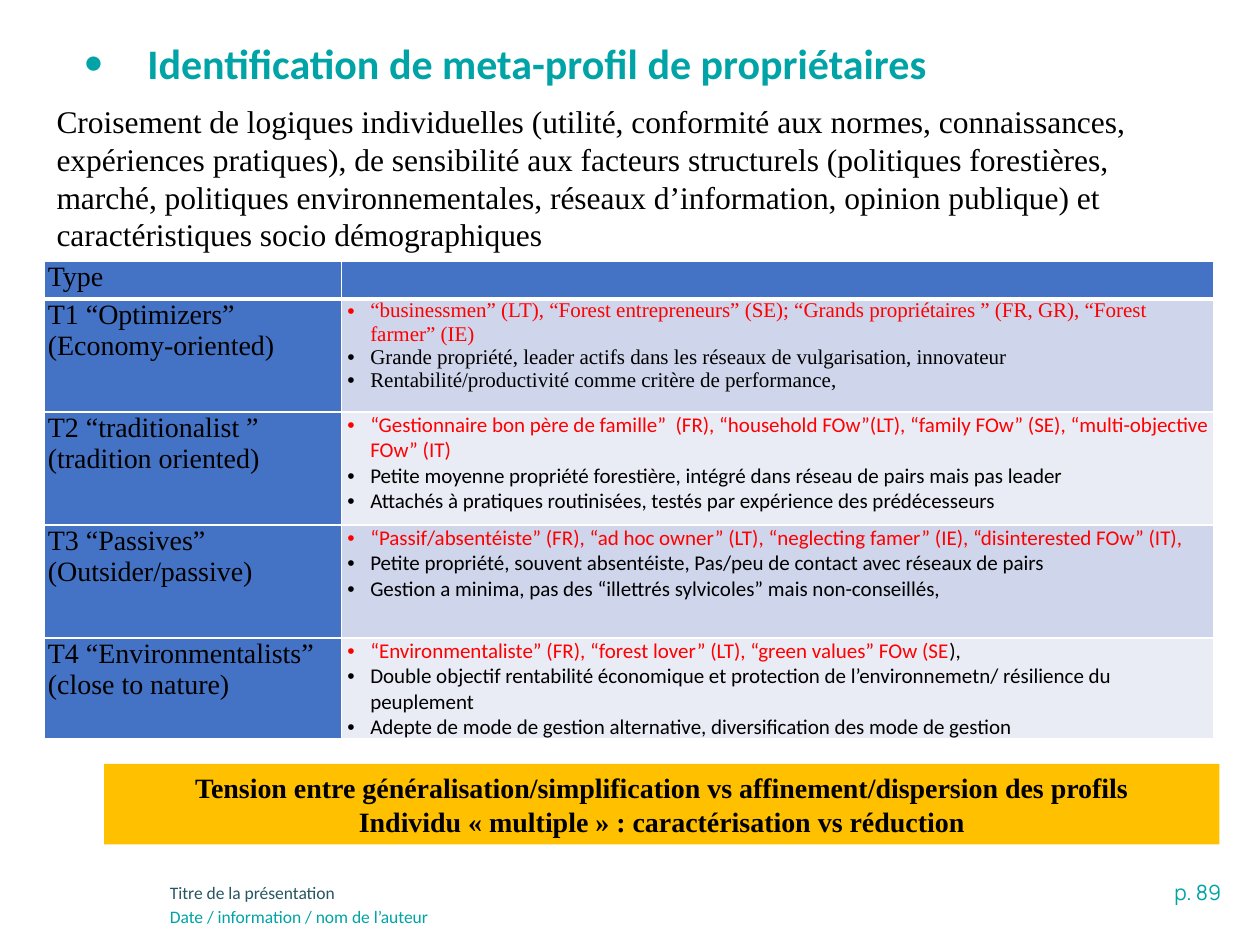
from dataclasses import dataclass

from lxml import etree
from pptx import Presentation
from pptx import util as u
from pptx.dml.color import RGBColor
from pptx.enum import shapes, text
from pptx.oxml import ns


@dataclass(frozen=True)
class Theme:
    sans: str = "Calibri"
    serif: str = "Times New Roman"
    number_font: str = "Manrope"
    teal: str = "00A3A6"
    dark_teal: str = "275662"
    black: str = "000000"
    white: str = "FFFFFF"
    red: str = "FF0000"
    blue: str = "4472C4"
    bands: tuple = ("CFD5EA", "E9EBF5")
    amber: str = "FFC000"
    title: int = 24
    intro: int = 18
    label: int = 16
    detail: int = 12
    footer: int = 10


def add_child(parent, tag, **attributes):
    return etree.SubElement(parent, ns.qn(tag), attributes)


def write(frame, paragraphs, *, size, font, color="000000", bold=False, align=text.PP_ALIGN.LEFT,
          bullet=None, hanging=(0, 0), spacing=None):
    for index, runs in enumerate(paragraphs):
        paragraph = frame.paragraphs[0] if index == 0 else frame.add_paragraph()
        if bullet:
            properties = paragraph._p.get_or_add_pPr()
            margin, indent = hanging
            properties.set("marL", str(u.Pt(margin)))
            properties.set("indent", str(u.Pt(indent)))
            add_child(properties, "a:buSzPct", val=str(bullet * 1000))
            add_child(properties, "a:buFont", typeface="Arial")
            add_child(properties, "a:buChar", char="•")
        paragraph.alignment = align
        if spacing:
            paragraph.line_spacing = spacing
        for content, run_color in [(runs, color)] if isinstance(runs, str) else runs:
            run = paragraph.add_run()
            run.text = content
            run.font.size = u.Pt(size)
            run.font.name = font
            run.font.bold = bold
            run.font.color.rgb = RGBColor.from_string(run_color)


class SlideBuilder:
    """Draws styled elements on the current slide, with lengths in points."""

    def __init__(self, slide, theme):
        self.slide = slide
        self.theme = theme

    def title(self, content, box):
        shape = self.slide.shapes.title
        shape.left, shape.top, shape.width, shape.height = map(u.Pt, box)
        frame = shape.text_frame
        frame.auto_size = text.MSO_AUTO_SIZE.NONE
        frame.vertical_anchor = text.MSO_ANCHOR.MIDDLE
        frame.margin_left = 0
        write(frame, [content], size=self.theme.title, font=self.theme.sans, color=self.theme.teal,
              bold=True, bullet=125, hanging=(36, -36), spacing=0.9)

    def text_box(self, content, box, **style):
        frame = self.slide.shapes.add_textbox(*map(u.Pt, box)).text_frame
        frame.word_wrap = True
        write(frame, [content], **style)

    def banner(self, lines, box):
        shape = self.slide.shapes.add_shape(shapes.MSO_SHAPE.RECTANGLE, *map(u.Pt, box))
        shape.shadow.inherit = False
        shape.fill.solid()
        shape.fill.fore_color.rgb = RGBColor.from_string(self.theme.amber)
        shape.line.fill.background()
        write(shape.text_frame, lines, size=self.theme.label, font=self.theme.serif,
              bold=True, align=text.PP_ALIGN.CENTER)

    def cell(self, cell, paragraphs, fill, bottom=1, top=1, **style):
        cell.margin_left = cell.margin_right = u.Pt(2)
        cell.margin_top = cell.margin_bottom = 0
        properties = cell._tc.get_or_add_tcPr()
        for tag, width in (("a:lnL", 1), ("a:lnR", 1), ("a:lnT", top), ("a:lnB", bottom)):
            line = add_child(properties, tag, w=str(u.Pt(width)))
            add_child(add_child(line, "a:solidFill"), "a:srgbClr", val=self.theme.white)
        cell.fill.solid()
        cell.fill.fore_color.rgb = RGBColor.from_string(fill)
        write(cell.text_frame, paragraphs, **style)

    def profile_table(self, profiles, box, columns, heights):
        theme = self.theme
        table = self.slide.shapes.add_table(len(heights), len(columns), *map(u.Pt, box)).table
        for column, width in zip(table.columns, columns):
            column.width = u.Pt(width)
        for row, height in zip(table.rows, heights):
            row.height = u.Pt(height)
        label = dict(size=theme.label, font=theme.serif)
        for index, heading in enumerate(("Type", "")):
            self.cell(table.cell(0, index), [heading], theme.blue, bottom=3, **label)
        for row, (name, font, details) in enumerate(profiles, start=1):
            top = 3 if row == 1 else 1
            self.cell(table.cell(row, 0), [name], theme.blue, top=top, **label)
            self.cell(table.cell(row, 1), details, theme.bands[(row - 1) % 2], top=top,
                      size=theme.detail, font=font, bullet=100, hanging=(14.4, -13))


def main():
    theme = Theme()
    presentation = Presentation()
    presentation.slide_width, presentation.slide_height = u.Pt(720), u.Pt(540)
    slide = presentation.slides.add_slide(presentation.slide_layouts[5])
    builder = SlideBuilder(slide, theme)

    builder.text_box("p. 89", (540.7, 499, 164.2, 21.6), size=theme.detail, font=theme.number_font,
                     color=theme.teal, align=text.PP_ALIGN.RIGHT)
    footers = (("Titre de la présentation", 500.4, theme.dark_teal),
               ("Date / information / nom de l’auteur", 514.1, theme.teal))
    for content, top, color in footers:
        builder.text_box(content, (90, top, 528.5, 20), size=theme.footer, font=theme.sans, color=color)

    builder.title("Identification de meta-profil de propriétaires", (48.2, 20.9, 572.4, 33.8))
    profiles = (
        ("T1 “Optimizers” (Economy-oriented)", theme.serif, [
            [("“businessmen” (LT), “Forest entrepreneurs” (SE); “Grands propriétaires ” (FR, GR), "
              "“Forest farmer” (IE)", theme.red)],
            "Grande propriété, leader actifs dans les réseaux de vulgarisation, innovateur",
            "Rentabilité/productivité comme critère de performance,"]),
        ("T2 “traditionalist ” (tradition oriented)", theme.sans, [
            [("“Gestionnaire bon père de famille”  (FR), “household FOw”(LT), “family FOw” (SE), "
              "“multi-objective FOw” (IT)", theme.red)],
            "Petite moyenne propriété forestière, intégré dans réseau de pairs mais pas leader",
            "Attachés à pratiques routinisées, testés par expérience des prédécesseurs"]),
        ("T3 “Passives” (Outsider/passive)", theme.sans, [
            [("“Passif/absentéiste” (FR), “ad hoc owner” (LT), “neglecting famer” (IE), "
              "“disinterested FOw” (IT),", theme.red)],
            "Petite propriété, souvent absentéiste, Pas/peu de contact avec réseaux de pairs",
            "Gestion a minima, pas des “illettrés sylvicoles” mais non-conseillés,"]),
        ("T4 “Environmentalists” (close to nature)", theme.sans, [
            [("“Environmentaliste” (FR), “forest lover” (LT), “green values” FOw (SE", theme.red),
             ("),", theme.black)],
            "Double objectif rentabilité économique et protection de l’environnemetn/ résilience du peuplement",
            "Adepte de mode de gestion alternative, diversification des mode de gestion"]),
    )
    builder.profile_table(profiles, (25.4, 149.3, 668.4, 273), (169.8, 498.6),
                          (21.3, 64.6, 64.6, 64.6, 57.6))
    builder.banner(("Tension entre généralisation/simplification vs affinement/dispersion des profils",
                    "Individu « multiple » : caractérisation vs réduction"), (59.5, 436.5, 637.4, 46))
    builder.text_box("Croisement de logiques individuelles (utilité, conformité aux normes, connaissances, "
                     "expériences pratiques), de sensibilité aux facteurs structurels (politiques forestières, "
                     "marché, politiques environnementales, réseaux d’information, opinion publique) et "
                     "caractéristiques socio démographiques", (25.2, 54.7, 668.9, 94.3),
                     size=theme.intro, font=theme.serif)
    presentation.save("out.pptx")


if __name__ == "__main__":
    main()
